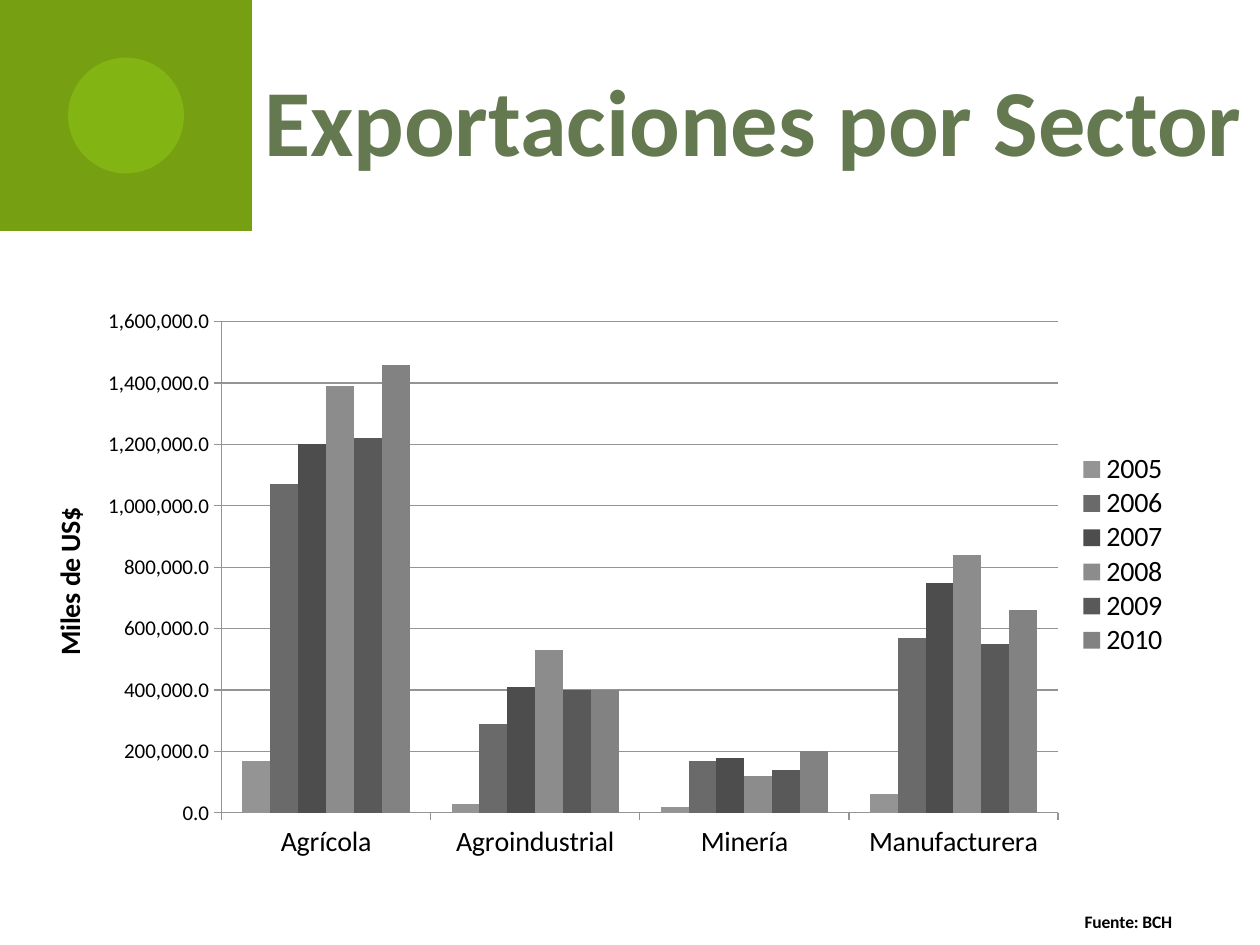
from dataclasses import dataclass

from lxml.etree import SubElement
from pptx import Presentation
from pptx.chart.data import CategoryChartData
from pptx.dml.color import RGBColor
from pptx.enum.chart import XL_CHART_TYPE, XL_LEGEND_POSITION, XL_TICK_MARK
from pptx.enum.shapes import MSO_SHAPE
from pptx.enum.text import MSO_AUTO_SIZE, PP_ALIGN
from pptx.oxml import parse_xml
from pptx.oxml.ns import qn
from pptx.util import Inches, Pt

FONT = "Calibri"
BLACK = RGBColor(0x00, 0x00, 0x00)
GREEN = RGBColor(0x76, 0x9F, 0x11)
LIME = RGBColor(0x8F, 0xCB, 0x17)
OLIVE = RGBColor(0x64, 0x79, 0x4F)
GRID = RGBColor(0x94, 0x94, 0x94)
CHART_NS = "http://schemas.openxmlformats.org/drawingml/2006/chart"


@dataclass
class Box:
    """Position and size in percent of the slide."""
    x: float
    y: float
    w: float
    h: float

    def emu(self) -> tuple:
        return tuple(int(share * side / 100) for share, side in
                     zip((self.x, self.y, self.w, self.h), (W, H, W, H)))


@dataclass
class Deco:
    shape: MSO_SHAPE
    box: Box
    color: RGBColor
    alpha: int = 100


@dataclass
class Year:
    name: str
    values: tuple  # in units of STEP
    grey: int


W, H = Inches(10), Inches(7.5)
STEP = 10000
DECOS = (
    Deco(MSO_SHAPE.RECTANGLE, Box(0, 0, 20, 24.45), GREEN),
    Deco(MSO_SHAPE.OVAL, Box(5.4, 6.1, 9.2, 12.25), LIME, 50),
)
SECTORS = ("Agrícola", "Agroindustrial", "Minería", "Manufacturera")
YEARS = (
    Year("2005", (17, 3, 2, 6), 0x94),
    Year("2006", (107, 29, 17, 57), 0x6A),
    Year("2007", (120, 41, 18, 75), 0x4D),
    Year("2008", (139, 53, 12, 84), 0x8C),
    Year("2009", (122, 40, 14, 55), 0x59),
    Year("2010", (146, 40, 20, 66), 0x82),
)


def set_font(font, size: float, color: RGBColor = BLACK, bold: bool = False) -> None:
    for name, value in {"name": FONT, "size": Pt(size), "bold": bold}.items():
        setattr(font, name, value)
    font.color.rgb = color


def add_deco(s, deco: Deco) -> None:
    sp = s.shapes.add_shape(deco.shape, *deco.box.emu())
    sp.shadow.inherit = False
    sp.fill.solid()
    sp.fill.fore_color.rgb = deco.color
    sp.line.fill.background()
    if deco.alpha < 100:
        clr = sp.fill._xPr.find(".//" + qn("a:srgbClr"))
        SubElement(clr, qn("a:alpha")).set("val", str(deco.alpha * 1000))


def place(element, index: int, inner: bool = False, **percents: float) -> None:
    """Give a chart part a manual layout, in percent of the chart."""
    for old in element.findall(qn("c:layout")):
        element.remove(old)
    target = '<c:layoutTarget val="inner"/>' if inner else ""
    modes = "".join(f'<c:{k}Mode val="edge"/>' for k in "xy")
    values = "".join(f'<c:{k} val="{v / 100:.4f}"/>' for k, v in percents.items())
    element.insert(index, parse_xml(
        f'<c:layout xmlns:c="{CHART_NS}"><c:manualLayout>'
        f"{target}{modes}{values}</c:manualLayout></c:layout>"))


def style_axis(axis, size: float, title: str, title_size: float, x: float, y: float) -> None:
    set_font(axis.tick_labels.font, size)
    axis.major_tick_mark = XL_TICK_MARK.OUTSIDE
    axis.format.line.color.rgb = GRID
    p = axis.axis_title.text_frame.paragraphs[0]
    r = p.add_run()
    r.text = title
    set_font(r.font, title_size, bold=True)
    place(axis.axis_title._element, 1, x=x, y=y)


def add_sector_chart(s, box: Box) -> None:
    data = CategoryChartData(number_format="#,##0.0")
    data.categories = SECTORS
    for year in YEARS:
        data.add_series(year.name, [v * STEP for v in year.values])
    chart = s.shapes.add_chart(XL_CHART_TYPE.COLUMN_CLUSTERED, *box.emu(), data).chart
    chart.has_title = False
    set_font(chart.font, 10)

    # Columns
    plot = chart.plots[0]
    for name, value in {"gap_width": 150, "overlap": 0, "vary_by_categories": False}.items():
        setattr(plot, name, value)
    for series, year in zip(plot.series, YEARS):
        series.format.fill.solid()
        series.format.fill.fore_color.rgb = RGBColor(*[year.grey] * 3)
    place(chart._chartSpace.find(".//" + qn("c:plotArea")), 0, inner=True,
          x=15.9, y=8.9, w=67.75, h=71.8)

    # Axes
    style_axis(chart.category_axis, 16, "Fuente: BCH", 10, 85.55, 94.5)
    val = chart.value_axis
    style_axis(val, 12, "Miles de US$", 16, 1.65, 35.25)
    for name, value in {"minimum_scale": 0, "maximum_scale": 1600000,
                        "major_unit": 200000, "has_major_gridlines": True}.items():
        setattr(val, name, value)
    val.major_gridlines.format.line.color.rgb = GRID
    val.tick_labels.number_format = "#,##0.0"
    val.tick_labels.number_format_is_linked = False

    # Legend
    chart.has_legend = True
    legend = chart.legend
    legend.position = XL_LEGEND_POSITION.RIGHT
    legend.include_in_layout = False
    set_font(legend.font, 16)
    place(legend._element, 1, x=82.9, y=28, w=12, h=30)


def add_heading(s, text: str, box: Box) -> None:
    tf = s.shapes.add_textbox(*box.emu()).text_frame
    tf.word_wrap = False
    tf.auto_size = MSO_AUTO_SIZE.SHAPE_TO_FIT_TEXT
    p = tf.paragraphs[0]
    p.alignment = PP_ALIGN.CENTER
    r = p.add_run()
    r.text = text
    set_font(r.font, 54, OLIVE, bold=True)


def main() -> None:
    prs = Presentation()
    prs.slide_width, prs.slide_height = W, H
    s = prs.slides.add_slide(prs.slide_layouts[6])
    for deco in DECOS:
        add_deco(s, deco)
    add_sector_chart(s, Box(2, 27.6, 98, 72.4))
    add_heading(s, "Exportaciones por Sector", Box(19.6, 5.9, 80.4, 13.5))
    prs.save("out.pptx")


if __name__ == "__main__":
    main()
